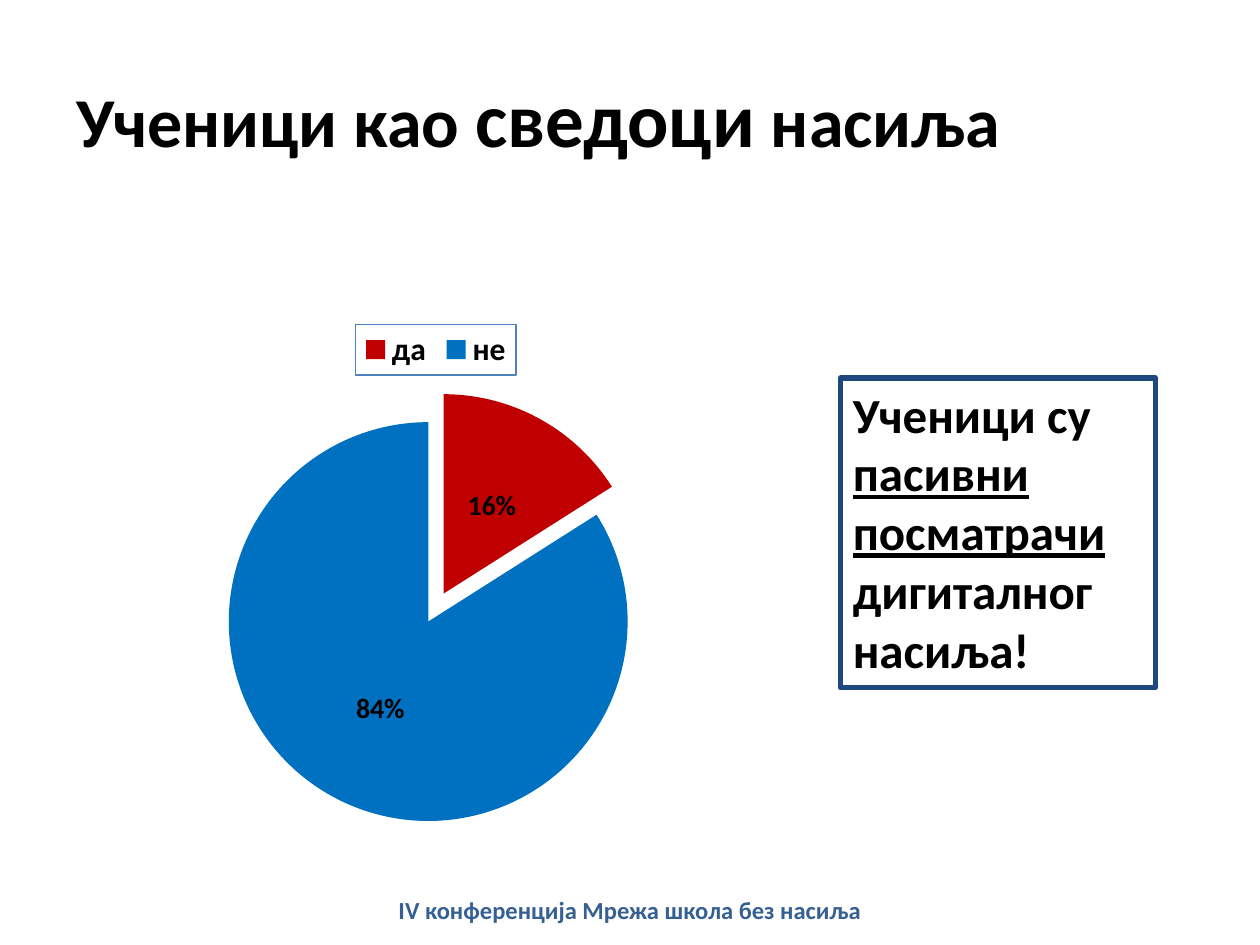
from dataclasses import dataclass
from typing import Optional

from lxml import etree
from pptx import Presentation
from pptx import util as u
from pptx.chart.data import CategoryChartData
from pptx.dml.color import RGBColor
from pptx.enum import chart as ch, shapes, text as tx
from pptx.oxml.ns import qn

FONT = "Calibri"
BLACK = RGBColor(0x00, 0x00, 0x00)
RED = RGBColor(0xC0, 0x00, 0x00)
BLUE = RGBColor(0x00, 0x70, 0xC0)
NAVY = RGBColor(0x1F, 0x49, 0x7D)
STEEL = RGBColor(0x37, 0x60, 0x92)
EDGE = RGBColor(0x4F, 0x81, 0xBD)


@dataclass
class Run:
    text: str
    size: int
    under: Optional[bool] = None
    color: RGBColor = BLACK


@dataclass
class Slice:
    name: str
    share: float
    color: RGBColor


TITLE = [Run("Ученици као ", 40), Run("сведоци", 44), Run(" насиља ", 40)]
NOTE = [
    Run("Ученици су ", 28),
    Run("пасивни посматрачи ", 28, under=True),
    Run("дигиталног насиља!", 28),
]
FOOTER = [Run("IV конференција Мрежа школа без насиља", 14, color=STEEL)]
SLICES = [Slice("да", 0.16, RED), Slice("не", 0.84, BLUE)]


def style(font, size: int, color: RGBColor = BLACK) -> None:
    font.name = FONT
    font.size = u.Pt(size)
    font.bold = True
    font.color.rgb = color


def write(frame, runs: list[Run], align) -> None:
    frame.word_wrap = True
    para = frame.paragraphs[0]
    para.alignment = align
    for item in runs:
        run = para.add_run()
        run.text = item.text
        style(run.font, item.size, item.color)
        run.font.underline = item.under


def box(left: float, top: float, width: float, height: float) -> tuple:
    return tuple(u.Inches(n) for n in (left, top, width, height))


def draw_title(slide) -> None:
    title = slide.shapes.title
    title.left, title.top, title.width, title.height = box(0.5, 0.3, 7.67, 1.25)
    title.text_frame.vertical_anchor = tx.MSO_ANCHOR.MIDDLE
    write(title.text_frame, TITLE, tx.PP_ALIGN.CENTER)


def draw_pie(slide) -> None:
    data = CategoryChartData(number_format="0%")
    data.categories = [part.name for part in SLICES]
    data.add_series("Series 1", [part.share for part in SLICES])
    pie = slide.shapes.add_chart(
        ch.XL_CHART_TYPE.PIE, *box(0.75, 2.5, 5.42, 4.17), data
    ).chart
    pie.has_title = False
    pie.font.name = FONT
    pie.font.size = u.Pt(10)
    pie.font.color.rgb = BLACK

    pie.has_legend = True
    pie.legend.position = ch.XL_LEGEND_POSITION.TOP
    pie.legend.include_in_layout = False
    style(pie.legend.font, 18)
    frame_legend(pie.legend)

    plot = pie.plots[0]
    plot.vary_by_categories = True
    series = plot.series[0]
    for spot, part in enumerate(SLICES):
        fill = series.points[spot].format.fill
        fill.solid()
        fill.fore_color.rgb = part.color
    explode(series, 8)

    plot.has_data_labels = True
    labels = plot.data_labels
    labels.show_value = True
    labels.show_percentage = False
    labels.number_format = "0%"
    labels.number_format_is_linked = False
    labels.position = ch.XL_LABEL_POSITION.CENTER
    style(labels.font, 16)


def frame_legend(legend) -> None:
    props = etree.Element(qn("c:spPr"))
    line = etree.SubElement(props, qn("a:ln"), w=str(u.Pt(0.75)))
    fill = etree.SubElement(line, qn("a:solidFill"))
    etree.SubElement(fill, qn("a:srgbClr"), val=str(EDGE))
    legend._element.find(qn("c:txPr")).addprevious(props)


def explode(series, percent: int) -> None:
    gap = etree.Element(qn("c:explosion"), val=str(percent))
    series._element.find(qn("c:dPt")).addprevious(gap)


def draw_note(slide) -> None:
    note = slide.shapes.add_shape(
        shapes.MSO_SHAPE.RECTANGLE, *box(6.67, 3, 2.5, 2.46)
    )
    note.shadow.inherit = False
    note.fill.background()
    note.line.color.rgb = NAVY
    note.line.width = u.Pt(3)
    frame = note.text_frame
    frame.vertical_anchor = tx.MSO_ANCHOR.TOP
    write(frame, NOTE, tx.PP_ALIGN.LEFT)
    frame.auto_size = tx.MSO_AUTO_SIZE.SHAPE_TO_FIT_TEXT


def draw_footer(slide) -> None:
    frame = slide.shapes.add_textbox(*box(0, 7.1, 10, 0.4)).text_frame
    frame.margin_top = 0
    frame.vertical_anchor = tx.MSO_ANCHOR.TOP
    write(frame, FOOTER, tx.PP_ALIGN.CENTER)


def main() -> None:
    deck = Presentation()
    deck.slide_width, deck.slide_height = u.Inches(10), u.Inches(7.5)
    slide = deck.slides.add_slide(deck.slide_layouts[5])
    draw_title(slide)
    draw_note(slide)
    draw_pie(slide)
    draw_footer(slide)
    deck.save("out.pptx")


if __name__ == "__main__":
    main()
